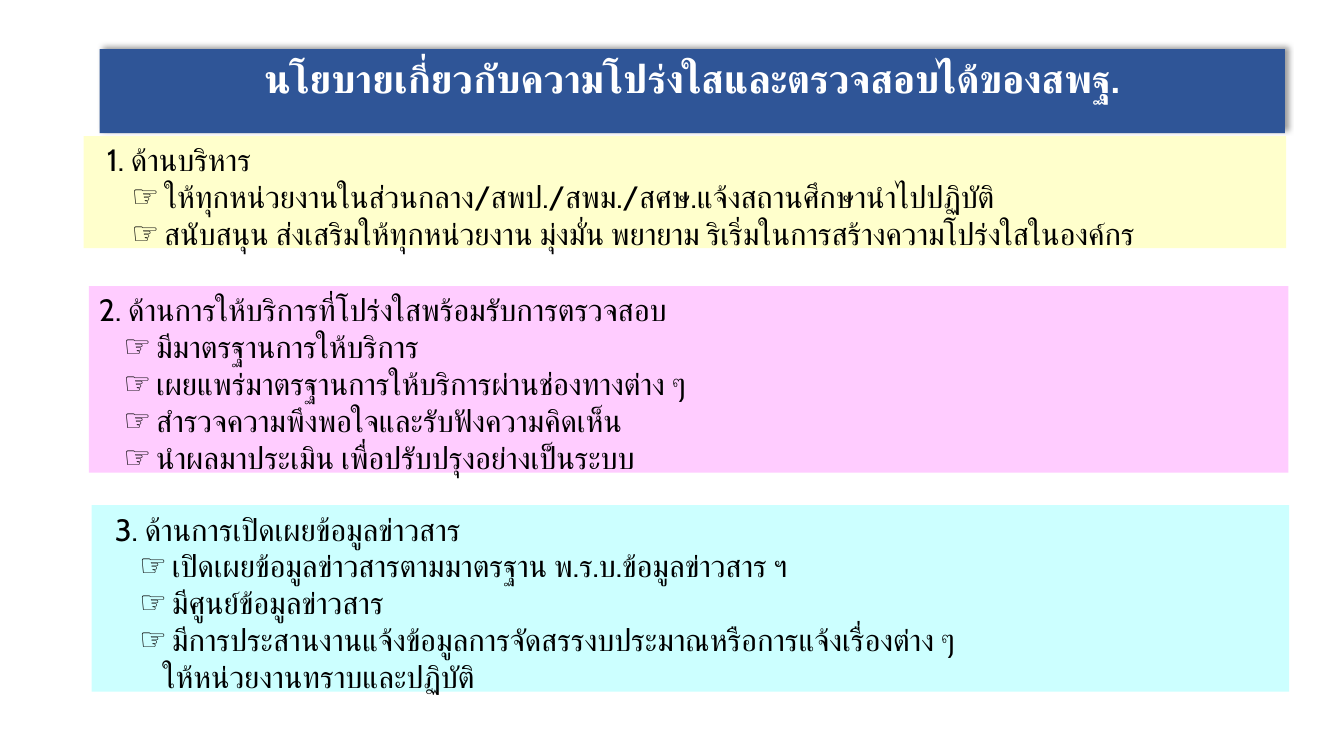
from dataclasses import dataclass

from lxml.etree import SubElement
from pptx import Presentation
from pptx.dml.color import RGBColor
from pptx.enum.text import MSO_ANCHOR, MSO_AUTO_SIZE, PP_ALIGN
from pptx.oxml.ns import qn
from pptx.util import Cm, Pt

FONT = "Cabin"
WHITE = RGBColor(0xFF, 0xFF, 0xFF)
BLACK = RGBColor(0x00, 0x00, 0x00)
NAVY = RGBColor(0x2F, 0x55, 0x97)
YELLOW = RGBColor(0xFF, 0xFF, 0xCC)
PINK = RGBColor(0xFF, 0xCC, 0xFF)
CYAN = RGBColor(0xCC, 0xFF, 0xFF)

BULLET_OFFSET = 0.62
HANGING = 0.82
CONTINUATION_OFFSET = 1.2


@dataclass(frozen=True)
class Policy:
    left: float
    top: float
    width: float
    height: float
    color: RGBColor
    indent: float
    heading: str
    points: tuple[str, ...]
    continuation: str = ""


TITLE = "นโยบายเกี่ยวกับความโปร่งใสและตรวจสอบได้ของสพฐ."
POLICIES = (
    Policy(2.11, 3.43, 30.3, 3.07, YELLOW, 0.33, "1. ด้านบริหาร", (
        "ให้ทุกหน่วยงานในส่วนกลาง/สพป./สพม./สศษ.แจ้งสถานศึกษานำไปปฏิบัติ",
        "สนับสนุน ส่งเสริมให้ทุกหน่วยงาน มุ่งมั่น พยายาม ริเริ่มในการสร้างความโปร่งใสในองค์กร",
    )),
    Policy(2.24, 7.21, 30.23, 4.95, PINK, 0, "2. ด้านการให้บริการที่โปร่งใสพร้อมรับการตรวจสอบ", (
        "มีมาตรฐานการให้บริการ",
        "เผยแพร่มาตรฐานการให้บริการผ่านช่องทางต่าง ๆ",
        "สำรวจความพึงพอใจและรับฟังความคิดเห็น",
        "นำผลมาประเมิน เพื่อปรับปรุงอย่างเป็นระบบ",
    )),
    Policy(2.31, 12.73, 30.18, 4.95, CYAN, 0.33, "3. ด้านการเปิดเผยข้อมูลข่าวสาร", (
        "เปิดเผยข้อมูลข่าวสารตามมาตรฐาน พ.ร.บ.ข้อมูลข่าวสาร ฯ",
        "มีศูนย์ข้อมูลข่าวสาร",
        "มีการประสานงานแจ้งข้อมูลการจัดสรรงบประมาณหรือการแจ้งเรื่องต่าง ๆ",
    ), "ให้หน่วยงานทราบและปฏิบัติ"),
)


def prepare_box(box, left: float, top: float, width: float, height: float, color: RGBColor) -> None:
    """Place a placeholder (lengths in cm), fill it and fit it to its text."""
    box.left, box.top, box.width, box.height = Cm(left), Cm(top), Cm(width), Cm(height)
    box.fill.solid()
    box.fill.fore_color.rgb = color
    frame = box.text_frame
    frame.word_wrap = True
    frame.auto_size = MSO_AUTO_SIZE.SHAPE_TO_FIT_TEXT
    frame.vertical_anchor = MSO_ANCHOR.TOP


def add_run(para, text: str, size: int, color: RGBColor, bold: bool = False) -> None:
    span = para.add_run()
    span.text = text
    span.font.size = Pt(size)
    span.font.bold = bold
    span.font.color.rgb = color
    span.font.name = FONT
    SubElement(span.font._element, qn("a:cs"), typeface=FONT)


def add_line(para, text: str, indent: float, bullet: bool = False) -> None:
    """Write one line; a bullet hangs to the left of the text."""
    para.alignment = PP_ALIGN.LEFT
    para.space_before = Pt(0)
    properties = para._p.get_or_add_pPr()
    properties.set("marL", str(Cm(indent)))
    properties.set("indent", str(Cm(-HANGING) if bullet else 0))
    if bullet:
        SubElement(properties, qn("a:buFont"), typeface=FONT)
        SubElement(properties, qn("a:buChar"), char="☞")
    else:
        SubElement(properties, qn("a:buNone"))
    add_run(para, text, 22, BLACK)


def add_shadow(box) -> None:
    effects = SubElement(box._element.spPr, qn("a:effectLst"))
    shadow = SubElement(effects, qn("a:outerShdw"), blurRad=str(Pt(4)), dist=str(Pt(3)),
                        dir=str(315 * 60000), algn="bl", rotWithShape="0")
    color = SubElement(shadow, qn("a:srgbClr"), val=str(BLACK))
    SubElement(color, qn("a:alpha"), val="40000")


def fill_title(box) -> None:
    prepare_box(box, 2.51, 1.24, 29.87, 1.45, NAVY)
    add_shadow(box)
    para = box.text_frame.paragraphs[0]
    para.alignment = PP_ALIGN.CENTER
    add_run(para, TITLE, 28, WHITE, bold=True)


def fill_policy(box, policy: Policy) -> None:
    prepare_box(box, policy.left, policy.top, policy.width, policy.height, policy.color)
    frame = box.text_frame
    add_line(frame.paragraphs[0], policy.heading, policy.indent)
    bullet_indent = policy.indent + BULLET_OFFSET
    for point in policy.points:
        add_line(frame.add_paragraph(), point, bullet_indent + HANGING, bullet=True)
    if policy.continuation:
        add_line(frame.add_paragraph(), policy.continuation, policy.indent + CONTINUATION_OFFSET)


def main() -> None:
    deck = Presentation()
    deck.slide_width, deck.slide_height = Cm(33.87), Cm(19.05)
    page = deck.slides.add_slide(deck.slide_layouts.get_by_name("Comparison"))
    title, *bodies = page.placeholders
    fill_title(title)
    for box, policy in zip(bodies, POLICIES):
        fill_policy(box, policy)
    for box in bodies[len(POLICIES):]:
        box._element.getparent().remove(box._element)
    deck.save("out.pptx")


if __name__ == "__main__":
    main()
